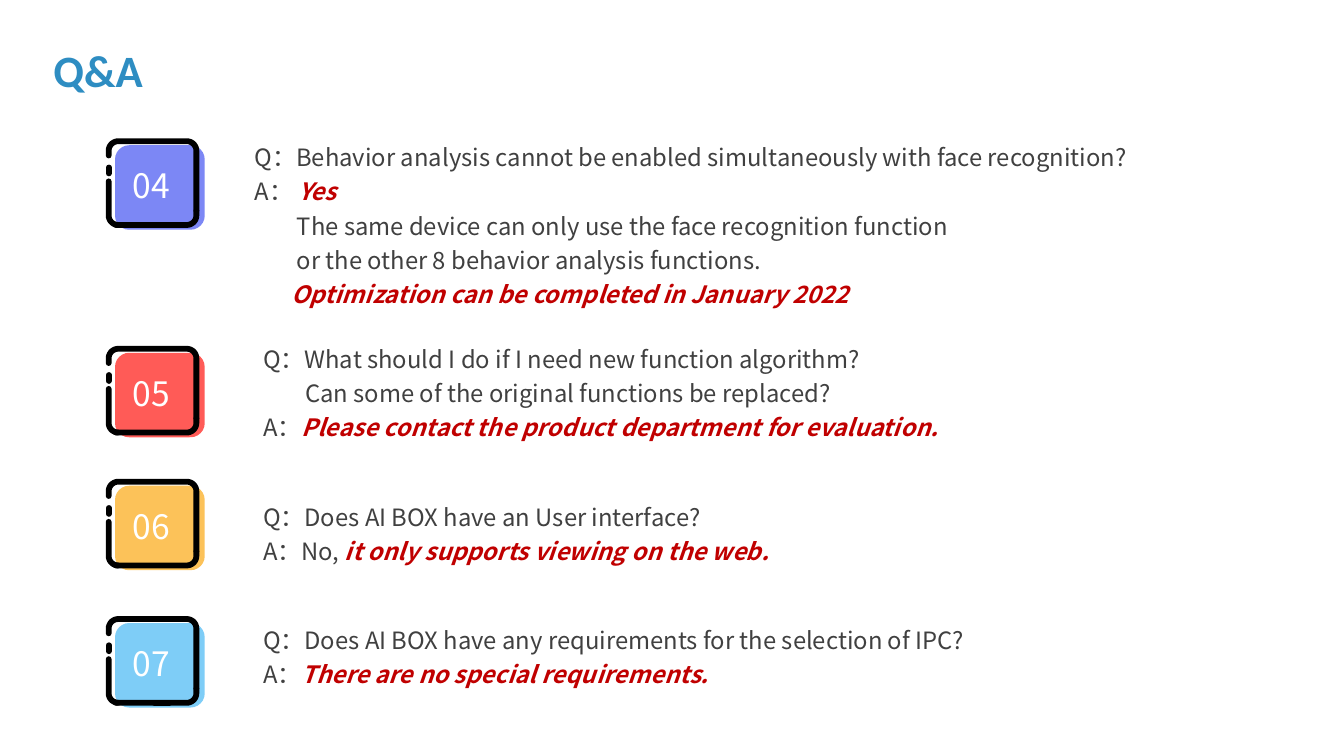
from dataclasses import dataclass
from math import cos, radians, sin

from lxml.etree import SubElement
from pptx import Presentation
from pptx.dml.color import RGBColor
from pptx.enum.shapes import MSO_CONNECTOR as Connector, MSO_SHAPE as Shape
from pptx.enum.text import MSO_ANCHOR as Anchor, PP_ALIGN as Align
from pptx.oxml.ns import qn
from pptx.util import Cm, Pt


@dataclass(frozen=True)
class Theme:
    heading_font: str = "Calibri"
    text_font: str = "Noto Sans CJK SC"
    heading: str = "2E8DC2"
    text: str = "404040"
    answer: str = "C00000"
    number: str = "FFFFFF"
    outline: str = "000000"
    heading_size: float = 32
    number_size: float = 24
    text_size: float = 17
    outline_width: float = 4.13


theme = Theme()


def style(run, face, size, color, bold=False, italic=False):
    run.font.name = face
    run.font.size = Pt(size)
    run.font.bold = bold
    run.font.italic = italic
    run.font.color.rgb = RGBColor.from_string(color)
    SubElement(run.font._element, qn("a:ea")).set("typeface", face)


def corner(x, y, start):
    angles = [radians(start + step) for step in range(0, 91, 10)]
    return [(x + RADIUS * cos(a), y + RADIUS * sin(a)) for a in angles]


LEFT, RIGHT, HEIGHT, RADIUS = 2.74, 4.95, 2.11, 0.24
INDENT = 1.06

questions = [
    ("04", "7C87F5", 3.56, (6.17, 3.33, 25.68, 4.62), [
        (0, "Q：Behavior analysis cannot be enabled simultaneously with face recognition?", ""),
        (0, "A： ", "Yes"),
        (INDENT, "The same device can only use the face recognition function", ""),
        (INDENT, "or the other 8 behavior analysis functions.", ""),
        (0.93, "", "Optimization can be completed in January 2022"),
    ]),
    ("05", "FF5B57", 8.79, (6.38, 8.41, 23.83, 2.87), [
        (0, "Q：What should I do if I need new function algorithm?", ""),
        (INDENT, "Can some of the original functions be replaced?", ""),
        (0, "A：", "Please contact the product department for evaluation."),
    ]),
    ("06", "FCC259", 12.14, (6.38, 12.4, 23.83, 2.01), [
        (0, "Q：Does AI BOX have an User interface?", ""),
        (0, "A：No, ", "it only supports viewing on the web."),
    ]),
    ("07", "7ECDF7", 15.6, (6.38, 15.49, 21.92, 2.01), [
        (0, "Q：Does AI BOX have any requirements for the selection of IPC?", ""),
        (0, "A：", "There are no special requirements."),
    ]),
]

deck = Presentation()
deck.slide_width, deck.slide_height = Cm(33.87), Cm(19.05)
slide = deck.slides.add_slide(deck.slide_layouts[5])

heading = slide.shapes.title
heading.left, heading.top, heading.width, heading.height = Cm(1.09), Cm(0.94), Cm(12.42), Cm(1.63)
heading.text_frame.text = "Q&A"
heading.text_frame.vertical_anchor = Anchor.TOP
heading.text_frame.paragraphs[0].alignment = Align.LEFT
style(heading.text_frame.paragraphs[0].runs[0], theme.heading_font,
      theme.heading_size, theme.heading, bold=True)

for number, color, top, answer_area, lines in questions:
    badge = slide.shapes.add_group_shape().shapes
    bottom = top + HEIGHT

    tile = badge.add_shape(Shape.ROUNDED_RECTANGLE, Cm(2.9), Cm(top + 0.1), Cm(2.26), Cm(2.13))
    tile.shadow.inherit = False
    tile.fill.solid()
    tile.fill.fore_color.rgb = RGBColor.from_string(color)
    tile.line.fill.background()

    near, far = LEFT + RADIUS, RIGHT - RADIUS
    high, low = top + RADIUS, bottom - RADIUS
    curves = [
        [(RIGHT, top + 1.75), *corner(far, low, 0), (LEFT + 0.18, bottom)],
        [*corner(near, low, 90), (LEFT, top + 1.01)],
        [(LEFT, top + 0.36), *corner(near, high, 180), *corner(far, high, 270), (RIGHT, top + 1.75)],
    ]
    strokes = []
    for curve in curves:
        points = [(Cm(x), Cm(y)) for x, y in curve]
        builder = badge.build_freeform(*points[0])
        builder.add_line_segments(points[1:], close=False)
        stroke = builder.convert_to_shape()
        stroke.fill.background()
        strokes.append(stroke)
    dashes = [(4.27, bottom, 3.89, bottom), (LEFT, top + 0.81, LEFT, top + 0.66)]
    for dash in dashes:
        strokes.append(badge.add_connector(Connector.STRAIGHT, *map(Cm, dash)))
    for stroke in strokes:
        stroke.line.color.rgb = RGBColor.from_string(theme.outline)
        stroke.line.width = Pt(theme.outline_width)
        properties = stroke._element.spPr
        properties.find(qn("a:ln")).set("cap", "rnd")
        SubElement(properties, qn("a:effectLst"))

    label = badge.add_textbox(Cm(3.1), Cm(top + 0.48), Cm(1.6), Cm(1.27)).text_frame
    label.word_wrap = True
    label.text = number
    label.paragraphs[0].alignment = Align.JUSTIFY
    style(label.paragraphs[0].runs[0], theme.text_font, theme.number_size, theme.number)

    dialogue = slide.shapes.add_textbox(*map(Cm, answer_area)).text_frame
    dialogue.word_wrap = True
    dialogue.text = "\n".join(plain for _, plain, _ in lines)
    for paragraph, (indent, plain, emphasis) in zip(dialogue.paragraphs, lines):
        paragraph.line_spacing = 1.2
        if indent:
            paragraph._p.get_or_add_pPr().set("marL", str(Cm(indent)))
        for run in paragraph.runs:
            style(run, theme.text_font, theme.text_size, theme.text)
        if emphasis:
            run = paragraph.add_run()
            run.text = emphasis
            style(run, theme.text_font, theme.text_size, theme.answer, bold=True, italic=True)

deck.save("out.pptx")
